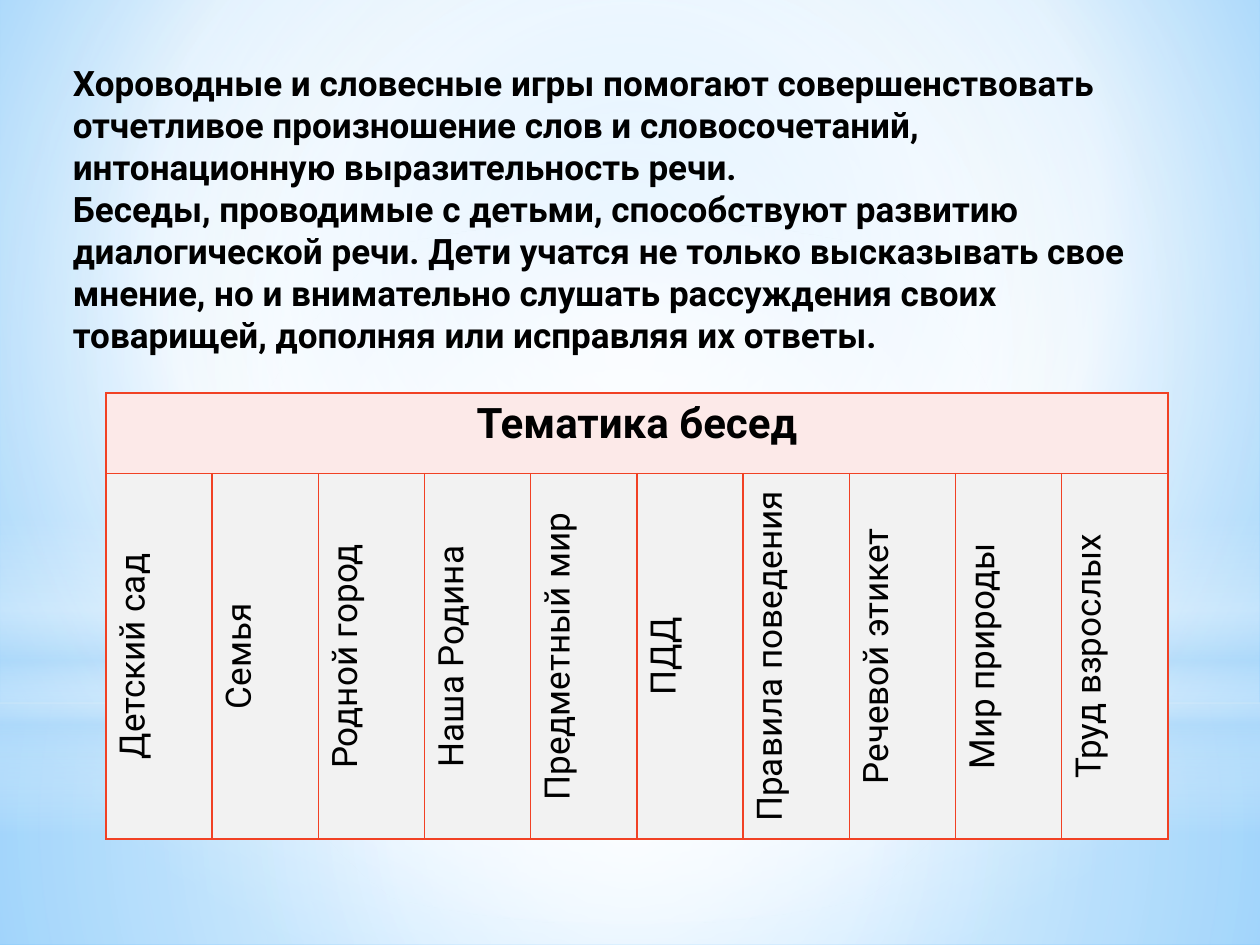
"""Build a slide on round games and talks with children, with a table of talk topics."""
from dataclasses import dataclass
from typing import Optional

from lxml.etree import SubElement
from pptx import Presentation
from pptx.dml.color import RGBColor
from pptx.enum.shapes import MSO_SHAPE
from pptx.enum.text import MSO_AUTO_SIZE, PP_ALIGN
from pptx.oxml.ns import qn
from pptx.util import Inches, Pt

COLORS = {
    "text": "000000",
    "white": "FFFFFF",
    "haze": "B4DCFA",
    "sky": "9ED5FF",
    "azure": "5BB9FF",
    "border": "F14124",
    "header": "FCE9E8",
    "topic": "F2F2F2",
}
STATEMENTS = (
    "Хороводные и словесные игры помогают совершенствовать отчетливое произношение "
    "слов и словосочетаний, интонационную выразительность речи.",
    "Беседы, проводимые с детьми, способствуют развитию диалогической речи. Дети учатся "
    "не только высказывать свое мнение, но и внимательно слушать рассуждения своих "
    "товарищей, дополняя или исправляя их ответы.",
)
TOPICS = (
    "Детский сад", "Семья", "Родной город", "Наша Родина", "Предметный мир",
    "ПДД", "Правила поведения", "Речевой этикет", "Мир природы", "Труд взрослых",
)
STATEMENT_FORMAT = {"name": "Roboto", "size": Pt(20), "bold": True}
HEADER_FORMAT = {"name": "Roboto", "size": Pt(24), "bold": True}
TOPIC_FORMAT = {"name": "Roboto", "size": Pt(20), "bold": False}
CENTRE = (50, 50, 50, 50)


@dataclass(frozen=True)
class Stop:
    position: int
    color: str
    opacity: int = 100


@dataclass(frozen=True)
class Glow:
    outline: MSO_SHAPE
    top: float
    height: float
    stops: tuple[Stop, ...]
    focus: Optional[tuple[int, int, int, int]] = CENTRE


SKY_STOPS = (Stop(0, "sky"), Stop(60, "white"), Stop(100, "azure"))
GLOWS = (
    Glow(MSO_SHAPE.RECTANGLE, 5.58, 1.92,
         (Stop(0, "white", 91), Stop(37, "white", 76), Stop(100, "haze", 79))),
    Glow(MSO_SHAPE.RECTANGLE, 0, 5.58,
         (Stop(0, "white", 89), Stop(48, "white", 62), Stop(100, "haze", 79))),
    Glow(MSO_SHAPE.RECTANGLE, 4.12, 2.5,
         (Stop(0, "white", 0), Stop(29, "white", 30), Stop(45, "haze", 40),
          Stop(55, "white", 26), Stop(65, "haze", 60), Stop(100, "white", 0)), None),
    Glow(MSO_SHAPE.OVAL, 1.75, 5.58, (Stop(0, "white"), Stop(56, "white", 0))),
)


def set_gradient(owner, fill, stops: tuple[Stop, ...], focus) -> None:
    """Fill with a circular gradient around focus, or a downward one without it."""
    fill.gradient()
    gradient = owner.element.find(".//" + qn("a:gradFill"))
    for child in list(gradient):
        gradient.remove(child)
    stop_list = SubElement(gradient, qn("a:gsLst"))
    for stop in stops:
        mark = SubElement(stop_list, qn("a:gs"), pos=str(stop.position * 1000))
        color = SubElement(mark, qn("a:srgbClr"), val=COLORS[stop.color])
        if stop.opacity < 100:
            SubElement(color, qn("a:alpha"), val=str(stop.opacity * 1000))
    if focus is None:
        SubElement(gradient, qn("a:lin"), ang="5400000", scaled="0")
    else:
        circle = SubElement(gradient, qn("a:path"), {"path": "circle"})
        sides = {side: str(share * 1000) for side, share in zip("ltrb", focus)}
        SubElement(circle, qn("a:fillToRect"), sides)


def add_glow(slide, glow: Glow) -> None:
    """Draw one full-width layer of light."""
    layer = slide.shapes.add_shape(
        glow.outline, 0, Inches(glow.top), Inches(10), Inches(glow.height))
    layer.shadow.inherit = False
    layer.line.fill.background()
    set_gradient(layer, layer.fill, glow.stops, glow.focus)


def write(paragraph, text: str, font_format: dict) -> None:
    """Put formatted text in a paragraph."""
    words = paragraph.add_run()
    words.text = text
    for attribute, value in font_format.items():
        setattr(words.font, attribute, value)
    words.font.color.rgb = RGBColor.from_string(COLORS["text"])


def style_cell(cell, fill_color: str) -> None:
    """Give a cell its borders and fill."""
    properties = cell._tc.get_or_add_tcPr()
    for side in ("lnL", "lnR", "lnT", "lnB"):
        border = SubElement(properties, qn(f"a:{side}"), w=str(Pt(1)))
        solid = SubElement(border, qn("a:solidFill"))
        SubElement(solid, qn("a:srgbClr"), val=COLORS["border"])
    cell.fill.solid()
    cell.fill.fore_color.rgb = RGBColor.from_string(COLORS[fill_color])


def add_statements(slide) -> None:
    """Write the two paragraphs above the table."""
    frame = slide.shapes.add_textbox(
        Inches(0.48), Inches(0.44), Inches(8.82), Inches(2.46)).text_frame
    frame.word_wrap = True
    frame.auto_size = MSO_AUTO_SIZE.SHAPE_TO_FIT_TEXT
    for index, statement in enumerate(STATEMENTS):
        paragraph = frame.add_paragraph() if index else frame.paragraphs[0]
        write(paragraph, statement, STATEMENT_FORMAT)


def add_topics(slide) -> None:
    """Draw the topics table with upright topic names."""
    table = slide.shapes.add_table(
        2, len(TOPICS), Inches(0.84), Inches(3.12), Inches(8.43), Inches(3.54)).table
    table.rows[0].height = Inches(0.64)
    table.rows[1].height = Inches(2.9)
    header = table.cell(0, 0)
    header.merge(table.cell(0, len(TOPICS) - 1))
    write(header.text_frame.paragraphs[0], "Тематика бесед", HEADER_FORMAT)
    header.text_frame.paragraphs[0].alignment = PP_ALIGN.CENTER
    for column, topic in enumerate(TOPICS):
        style_cell(table.cell(0, column), "header")
        cell = table.cell(1, column)
        style_cell(cell, "topic")
        cell._tc.get_or_add_tcPr().set("vert", "vert270")
        paragraph = cell.text_frame.paragraphs[0]
        paragraph.alignment = PP_ALIGN.CENTER
        write(paragraph, topic, TOPIC_FORMAT)


def main() -> None:
    """Assemble and save the slide."""
    deck = Presentation()
    deck.slide_width, deck.slide_height = Inches(10), Inches(7.5)
    slide = deck.slides.add_slide(deck.slide_layouts[6])
    set_gradient(slide, slide.background.fill, SKY_STOPS, (20, 10, 20, 60))
    for glow in GLOWS:
        add_glow(slide, glow)
    add_statements(slide)
    add_topics(slide)
    deck.save("out.pptx")


if __name__ == "__main__":
    main()
